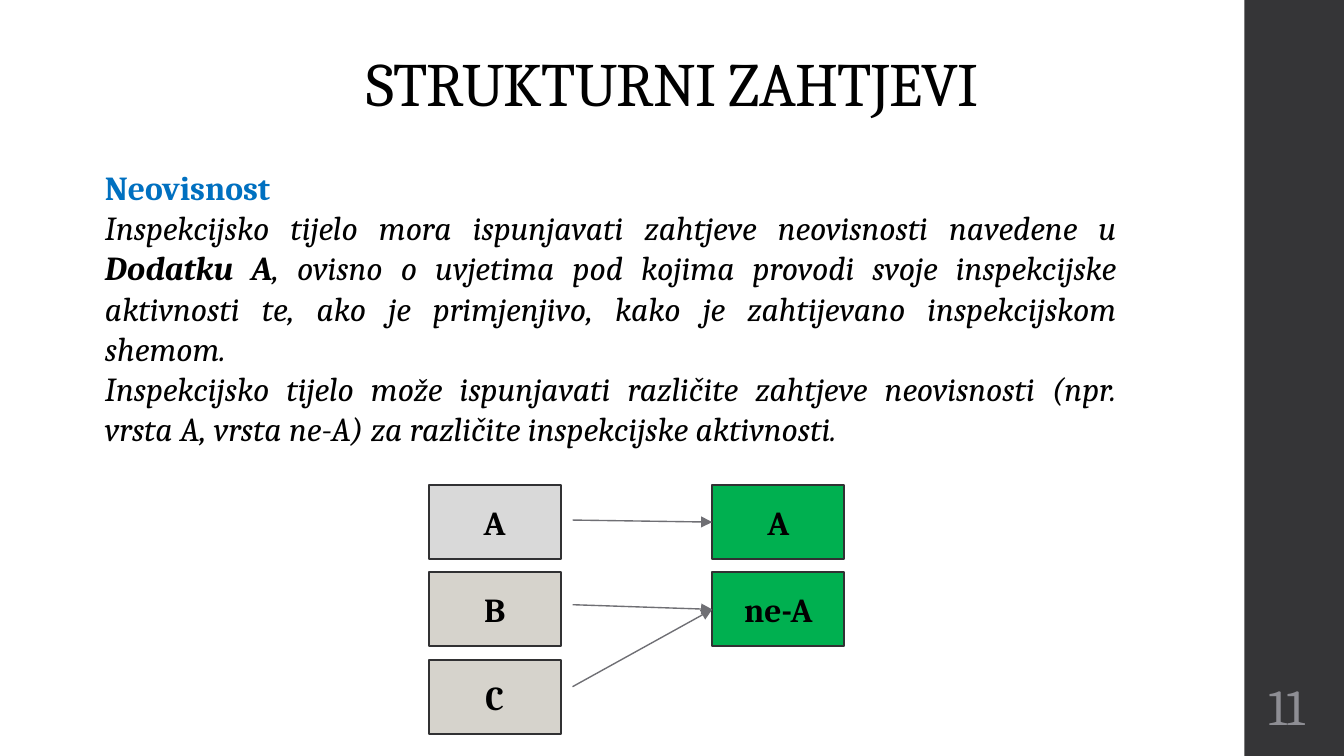
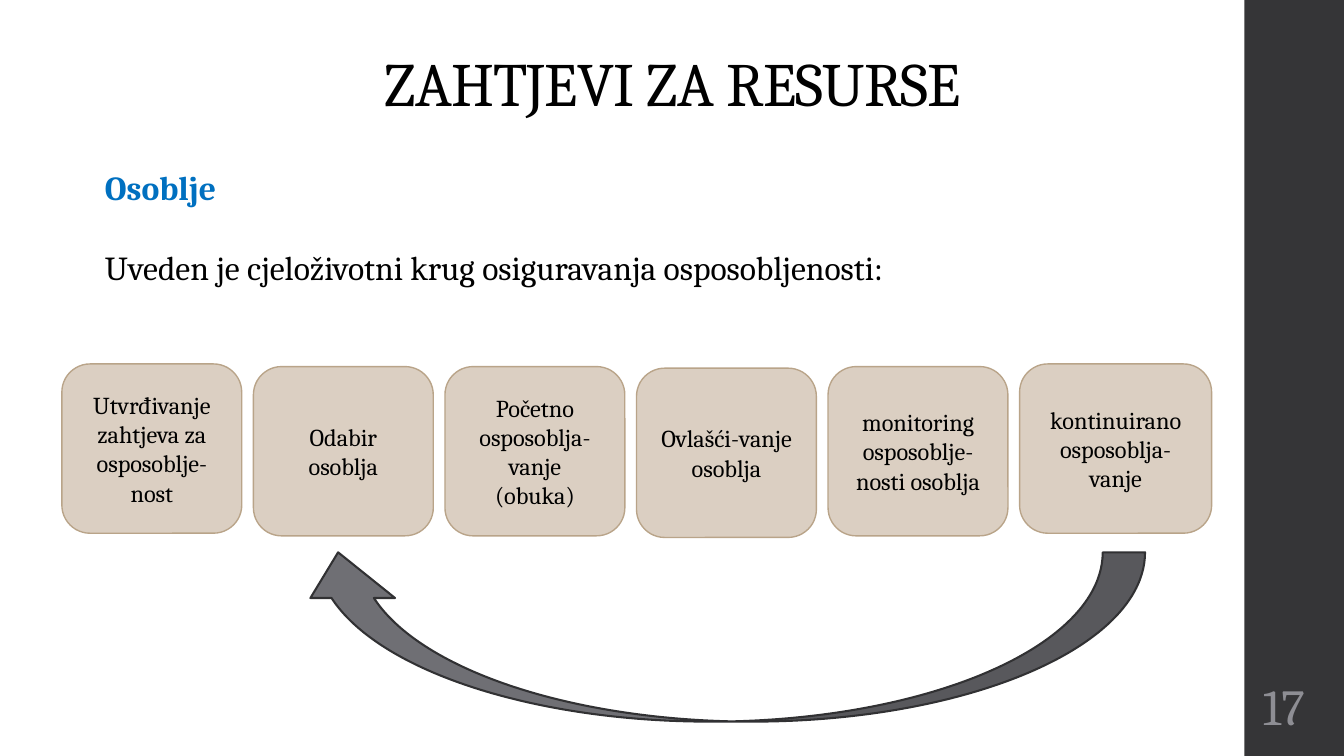
from lxml.etree import SubElement
from pptx import Presentation
from pptx.dml.color import RGBColor
from pptx.enum.shapes import MSO_CONNECTOR, MSO_SHAPE
from pptx.enum.text import MSO_ANCHOR, MSO_AUTO_SIZE, PP_ALIGN
from pptx.oxml.ns import qn
from pptx.util import Cm, Pt

COLORS = {
    "ink": "000000",
    "heading": "0070C0",
    "band": "353537",
    "number": "8E8E94",
    "outline": "313133",
    "arrow": "6F6F74",
    "light": "D9D9D9",
    "stone": "D6D3CC",
    "green": "00B050",
    "step": "DBCFC2",
    "step_edge": "B9A489",
}
FONT = "Cambria"
LINE_HEIGHT = 21.6


def rgb(name):
    return RGBColor.from_string(COLORS[name])


class Deck:
    def __init__(self):
        self.presentation = Presentation()
        self.presentation.slide_width = Cm(25.4)
        self.presentation.slide_height = Cm(14.29)
        self.slide = None

    def place(self, element, left, top, width, height):
        element.left, element.top = Cm(left), Cm(top)
        element.width, element.height = Cm(width), Cm(height)

    def frame(self, element, anchor, inset=True):
        frame = element.text_frame
        frame.word_wrap = True
        frame.auto_size = MSO_AUTO_SIZE.NONE
        frame.vertical_anchor = anchor
        if not inset:
            frame.margin_left = frame.margin_right = 0
            frame.margin_top = frame.margin_bottom = 0
        return frame

    def run(self, paragraph, text, size, color="ink", bold=False, italic=False):
        run = paragraph.add_run()
        run.text = text
        font = run.font
        font.name, font.size = FONT, Pt(size)
        font.bold, font.italic = bold, italic
        font.color.rgb = rgb(color)
        return run

    def start(self, title, number):
        """Open a slide with its title, side band and page number."""
        self.slide = self.presentation.slides.add_slide(self.presentation.slide_layouts[1])
        heading = self.slide.shapes.title
        self.place(heading, 2.9, 1.17, 19.63, 1.09)
        paragraph = self.frame(heading, MSO_ANCHOR.BOTTOM, inset=False).paragraphs[0]
        paragraph.alignment = PP_ALIGN.CENTER
        paragraph.line_spacing = 0.9
        run = self.run(paragraph, title, 33)
        run.font._element.set("spc", "-40")

        self.box(MSO_SHAPE.RECTANGLE, (23.52, 0, 1.9, 14.29), "band")
        page = self.slide.shapes.add_textbox(Cm(23.14), Cm(12.78), Cm(1.52), Cm(1.09))
        paragraph = self.frame(page, MSO_ANCHOR.MIDDLE, inset=False).paragraphs[0]
        paragraph.alignment = PP_ALIGN.RIGHT
        self.run(paragraph, number, 27, "number")

    def body(self, heading, paragraphs, height, gap=0):
        """Fill the body with a blue heading and unbulleted lists of (text, style) runs."""
        holder = self.slide.placeholders[1]
        self.place(holder, 1.73, 3.02, 19.63, height)
        frame = self.frame(holder, MSO_ANCHOR.TOP)
        content = [[(heading, {"color": "heading", "bold": True})], *paragraphs]
        for index, runs in enumerate(content):
            paragraph = frame.add_paragraph() if index else frame.paragraphs[0]
            properties = paragraph._p.get_or_add_pPr()
            properties.set("marL", "0")
            properties.set("indent", "0")
            SubElement(properties, qn("a:buNone"))
            paragraph.alignment = PP_ALIGN.JUSTIFY
            paragraph.space_before = Pt(gap if index else 0)
            for text, style in runs:
                self.run(paragraph, text, 18, **style)

    def box(self, kind, bounds, fill, edge=None, weight=1.1, lines=(), size=18, bold=False):
        box = self.slide.shapes.add_shape(kind, *map(Cm, bounds))
        box.shadow.inherit = False
        box.fill.solid()
        box.fill.fore_color.rgb = rgb(fill)
        if edge:
            box.line.color.rgb = rgb(edge)
            box.line.width = Pt(weight)
        else:
            box.line.fill.background()
        frame = self.frame(box, MSO_ANCHOR.MIDDLE)
        for index, text in enumerate(lines):
            paragraph = frame.add_paragraph() if index else frame.paragraphs[0]
            paragraph.alignment = PP_ALIGN.CENTER
            self.run(paragraph, text, size, bold=bold)
        return box

    def arrow(self, left, top, target):
        """Draw an arrow from a point to the middle of the target's left side."""
        arrow = self.slide.shapes.add_connector(
            MSO_CONNECTOR.STRAIGHT, Cm(left), Cm(top),
            target.left, target.top + target.height // 2)
        arrow.end_connect(target, 1)
        arrow.line.color.rgb = rgb("arrow")
        arrow.line.width = Pt(0.75)
        SubElement(arrow.line._get_or_add_ln(), qn("a:tailEnd"), type="triangle")
        SubElement(arrow._element.spPr, qn("a:effectLst"))


def independence(deck):
    deck.start("STRUKTURNI ZAHTJEVI", "11")
    italic = {"italic": True}
    deck.body("Neovisnost", [
        [("Inspekcijsko tijelo mora ispunjavati zahtjeve neovisnosti navedene u ", italic),
         ("Dodatku A", {"italic": True, "bold": True}),
         (", ovisno o uvjetima pod kojima provodi svoje inspekcijske aktivnosti te, "
          "ako je primjenjivo, kako je zahtijevano inspekcijskom shemom.", italic)],
        [("Inspekcijsko tijelo može ispunjavati različite zahtjeve neovisnosti "
          "(npr. vrsta A, vrsta ne-A) za različite inspekcijske aktivnosti.", italic)],
    ], height=5.64)

    def type_box(label, left, row, fill):
        return deck.box(MSO_SHAPE.RECTANGLE, (left, 9.17 + 1.65 * row, 2.5, 1.4), fill,
                        "outline", lines=[label], bold=True)

    for row, (label, fill) in enumerate([("A", "light"), ("B", "stone"), ("C", "stone")]):
        type_box(label, 8.1, row, fill)
    type_a, type_not_a = [type_box(label, 13.46, row, "green")
                          for row, label in enumerate(["A", "ne-A"])]
    for top, target in [(9.83, type_a), (11.43, type_not_a), (12.98, type_not_a)]:
        deck.arrow(10.82, top, target)


def staff(deck):
    deck.start("ZAHTJEVI ZA RESURSE", "17")
    deck.body("Osoblje", [
        [("Uveden je cjeloživotni krug osiguravanja osposobljenosti:", {})],
    ], height=4.11, gap=LINE_HEIGHT)

    steps = [
        (6.88, 3.4, ["Utvrđivanje zahtjeva za osposoblje-nost"]),
        (6.93, 3.4, ["Odabir osoblja"]),
        (6.93, 3.4, ["Početno osposoblja-vanje", "(obuka)"]),
        (6.96, 3.4, ["Ovlašći-vanje osoblja"]),
        (6.93, 3.4, ["monitoring osposoblje-nosti osoblja"]),
        (6.88, 3.63, ["kontinuirano osposoblja-vanje"]),
    ]
    for column, (top, width, lines) in enumerate(steps):
        deck.box(MSO_SHAPE.ROUNDED_RECTANGLE, (1.17 + 3.62 * column, top, width, 3.2),
                 "step", "step_edge", 0.75, lines, size=13)

    cycle = deck.box(MSO_SHAPE.CURVED_DOWN_ARROW, (5.59, 10.44, 16.05, 3.2),
                     "arrow", "outline")
    cycle.rotation = 180
    for index, value in enumerate([0.25, 0.5, 0.27]):
        cycle.adjustments[index] = value


def main():
    deck = Deck()
    independence(deck)
    staff(deck)
    deck.presentation.save("out.pptx")


if __name__ == "__main__":
    main()
